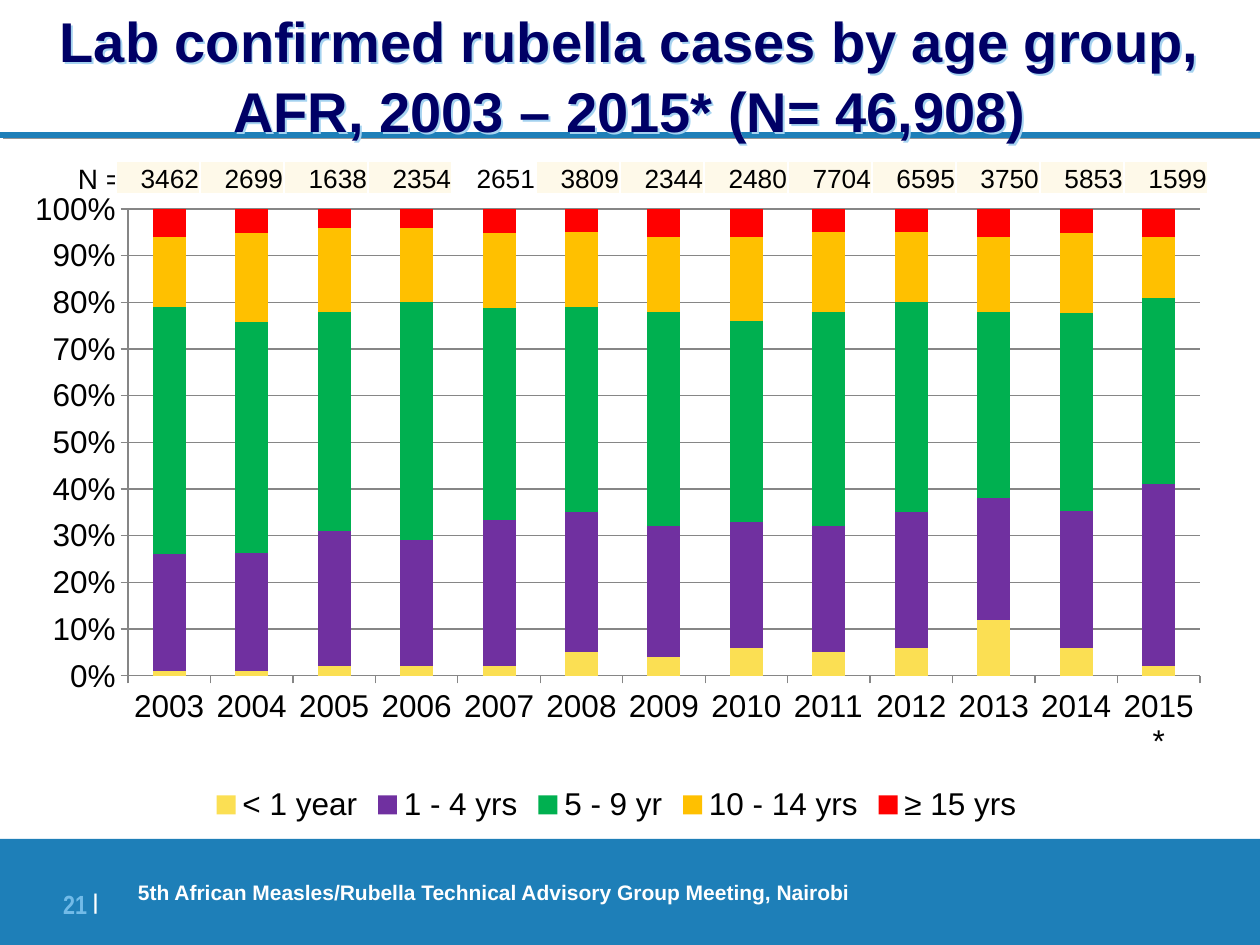
from dataclasses import dataclass

from lxml import etree
from pptx import Presentation
from pptx import util as u
from pptx.chart import data
from pptx.dml.color import RGBColor
from pptx.enum import chart as ch
from pptx.enum import shapes, text
from pptx.oxml import ns

PX = 914400 // 126
COLORS = {
    "blue": "1E7FB8", "pale_blue": "72BBE8", "title_shadow": "A5D3F0",
    "navy": "000066", "black": "000000", "white": "FFFFFF",
    "gray": "868686", "line_shadow": "969696", "cream": "FEF9E9",
    "yellow": "FBDF53", "purple": "7030A0", "green": "00B050",
    "amber": "FFC000", "red": "FF0000",
}


@dataclass(frozen=True)
class Box:
    x: int
    y: int
    w: int
    h: int

    def emu(self) -> list[u.Emu]:
        return [u.Emu(v * PX) for v in (self.x, self.y, self.w, self.h)]


@dataclass(frozen=True)
class Run:
    words: str
    size: int
    color: str
    bold: bool = False
    font: str = "Arial"
    baseline: int = 0


@dataclass(frozen=True)
class AgeGroup:
    name: str
    color: str
    shares: tuple[int, ...]


AGE_GROUPS = [
    AgeGroup("< 1 year", "yellow", (1, 1, 2, 2, 2, 5, 4, 6, 5, 6, 12, 6, 2)),
    AgeGroup("1 - 4 yrs", "purple", (25, 25, 29, 27, 31, 30, 28, 27, 27, 29, 26, 29, 39)),
    AgeGroup("5 - 9 yr", "green", (53, 49, 47, 51, 45, 44, 46, 43, 46, 45, 40, 42, 40)),
    AgeGroup("10 - 14 yrs", "amber", (15, 19, 18, 16, 16, 16, 16, 18, 17, 15, 16, 17, 13)),
    AgeGroup("≥ 15 yrs", "red", (6, 5, 4, 4, 5, 5, 6, 6, 5, 5, 6, 5, 6)),
]
YEARS = [str(year) for year in range(2003, 2015)] + ["2015*"]
CASES = [3462, 2699, 1638, 2354, 2651, 3809, 2344, 2480, 7704, 6595, 3750, 5853, 1599]
PLAIN_YEAR = "2007"


def rgb(name: str) -> RGBColor:
    return RGBColor.from_string(COLORS[name])


def add_runs(p, runs: list[Run], align=text.PP_ALIGN.LEFT) -> None:
    p.alignment = align
    for run in runs:
        r = p.add_run()
        r.text = run.words
        r.font.size = u.Pt(run.size)
        r.font.bold = run.bold
        r.font.name = run.font
        r.font.color.rgb = rgb(run.color)
        if run.baseline:
            r.font._element.set("baseline", str(run.baseline))


def set_insets(target, left: int, top: int, right: int, bottom: int) -> None:
    target.margin_left, target.margin_top = u.Emu(left * PX), u.Emu(top * PX)
    target.margin_right, target.margin_bottom = u.Emu(right * PX), u.Emu(bottom * PX)


def add_text(s, box: Box, runs: list[Run], align=text.PP_ALIGN.LEFT,
             anchor=text.MSO_ANCHOR.TOP, insets=(13, 6, 13, 6)):
    sp = s.shapes.add_textbox(*box.emu())
    tf = sp.text_frame
    tf.word_wrap = True
    tf.vertical_anchor = anchor
    set_insets(tf, *insets)
    add_runs(tf.paragraphs[0], runs, align)
    return sp


def add_effects(sp, color: str = "", dist: float = 0, angle: int = 0) -> None:
    """Give a shape a hard shadow, or none when no color is named."""
    effects = etree.SubElement(sp._element.spPr, ns.qn("a:effectLst"))
    if color:
        shadow = etree.SubElement(effects, ns.qn("a:outerShdw"), dist=str(u.Pt(dist)),
                                  dir=str(angle * 60000), algn="ctr", rotWithShape="0")
        etree.SubElement(shadow, ns.qn("a:srgbClr"), val=COLORS[color])


def add_frame(s) -> None:
    # Rule under the title
    rule = s.shapes.add_connector(shapes.MSO_CONNECTOR.STRAIGHT, 0, 135 * PX, 1260 * PX, 135 * PX)
    rule.line.color.rgb = rgb("blue")
    rule.line.width = u.Pt(3)
    add_effects(rule, "line_shadow", 2.2, 27)

    # Footer band with the meeting name
    sp = s.shapes.add_shape(shapes.MSO_SHAPE.RECTANGLE, *Box(0, 839, 1260, 106).emu())
    sp.shadow.inherit = False
    sp.fill.solid()
    sp.fill.fore_color.rgb = rgb("blue")
    sp.line.fill.background()
    tf = sp.text_frame
    tf.word_wrap = True
    tf.vertical_anchor = text.MSO_ANCHOR.MIDDLE
    set_insets(tf, 138, 6, 13, 6)
    add_runs(tf.paragraphs[0], [Run(
        "5th African Measles/Rubella Technical Advisory Group Meeting, Nairobi", 12, "white", True)])

    # Slide number
    add_text(s, Box(49, 878, 49, 45),
             [Run("21 ", 15, "pale_blue", True, "Arial Narrow"),
              Run("|", 21, "white", True, "Arial Narrow", 14000)],
             text.PP_ALIGN.RIGHT, insets=(0, 0, 0, 0))


def add_age_chart(s, box: Box, plot: Box) -> None:
    cd = data.CategoryChartData(number_format="0")
    cd.categories = YEARS
    for group in AGE_GROUPS:
        cd.add_series(group.name, group.shares)
    chart = s.shapes.add_chart(ch.XL_CHART_TYPE.COLUMN_STACKED_100, *box.emu(), cd).chart
    chart.has_title = False
    chart.font.size = u.Pt(18)
    chart.font.name = "Arial"
    chart.font.color.rgb = rgb("black")
    chart.has_legend = True
    chart.legend.position = ch.XL_LEGEND_POSITION.BOTTOM
    chart.legend.include_in_layout = False

    bars = chart.plots[0]
    bars.gap_width, bars.overlap, bars.vary_by_categories = 150, 100, False
    for series, group in zip(bars.series, AGE_GROUPS):
        series.format.fill.solid()
        series.format.fill.fore_color.rgb = rgb(group.color)

    values = chart.value_axis
    values.has_major_gridlines = True
    values.major_unit = 0.1
    values.tick_labels.number_format = "0%"
    values.tick_labels.number_format_is_linked = False
    for axis in (values, chart.category_axis):
        axis.major_tick_mark = ch.XL_TICK_MARK.OUTSIDE
    for part in (values, values.major_gridlines, chart.category_axis):
        part.format.line.color.rgb = rgb("gray")
        part.format.line.width = u.Pt(0.75)

    # Fixed plot area, as fractions of the chart
    area = chart._chartSpace.chart.plotArea
    for old in area.findall(ns.qn("c:layout")):
        area.remove(old)
    layout = etree.Element(ns.qn("c:layout"))
    area.insert(0, layout)
    manual = etree.SubElement(layout, ns.qn("c:manualLayout"))
    settings = {"layoutTarget": "inner", "xMode": "edge", "yMode": "edge",
                "x": (plot.x - box.x) / box.w, "y": (plot.y - box.y) / box.h,
                "w": plot.w / box.w, "h": plot.h / box.h}
    for tag, value in settings.items():
        etree.SubElement(manual, ns.qn(f"c:{tag}"), val=str(value))


def add_case_table(s, box: Box) -> None:
    table = s.shapes.add_table(1, len(CASES), *box.emu()).table
    table.first_row = table.horz_banding = False
    table.rows[0].height = u.Emu(box.h * PX)
    for i, (year, count) in enumerate(zip(YEARS, CASES)):
        table.columns[i].width = u.Emu(box.w // len(CASES) * PX)
        cell = table.cell(0, i)
        set_insets(cell, 1, 1, 1, 0)
        cell.vertical_anchor = text.MSO_ANCHOR.BOTTOM
        add_runs(cell.text_frame.paragraphs[0], [Run(str(count), 15, "black")], text.PP_ALIGN.RIGHT)
        tc_pr = cell._tc.get_or_add_tcPr()
        for side in ("lnL", "lnR", "lnT", "lnB"):
            edge = etree.SubElement(tc_pr, ns.qn(f"a:{side}"), w=str(u.Pt(1)))
            fill = etree.SubElement(edge, ns.qn("a:solidFill"))
            etree.SubElement(fill, ns.qn("a:srgbClr"), val=COLORS["white"])
        cell.fill.solid()
        cell.fill.fore_color.rgb = rgb("white" if year == PLAIN_YEAR else "cream")


def main() -> None:
    prs = Presentation()
    prs.slide_width, prs.slide_height = u.Inches(10), u.Inches(7.5)
    s = prs.slides.add_slide(prs.slide_layouts[6])
    add_frame(s)

    # Title
    title = add_text(s, Box(0, 0, 1260, 147),
                     [Run("Lab confirmed rubella cases by age group, AFR, 2003 – 2015* (N= 46,908)",
                          32, "navy", True)],
                     text.PP_ALIGN.CENTER, text.MSO_ANCHOR.MIDDLE)
    title.text_frame.paragraphs[0].line_spacing = 1.04
    add_effects(title, "title_shadow", 1.5, 45)

    # Case counts above the age distribution
    add_text(s, Box(65, 155, 102, 47), [Run("N =", 16, "black")])
    add_age_chart(s, Box(10, 178, 1213, 651), Box(128, 209, 1072, 467))
    add_case_table(s, Box(116, 161, 1092, 33))
    prs.save("out.pptx")


if __name__ == "__main__":
    main()
